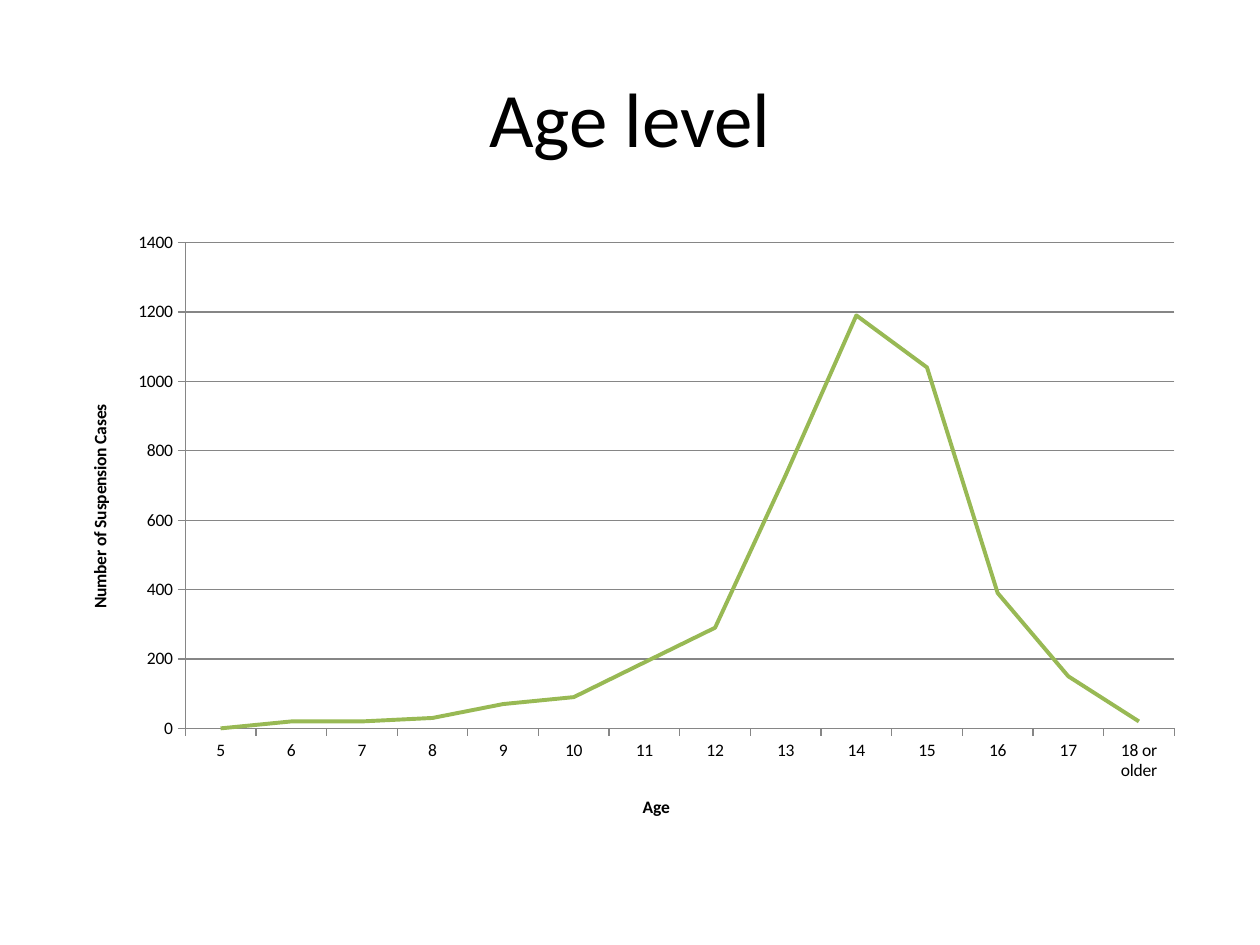
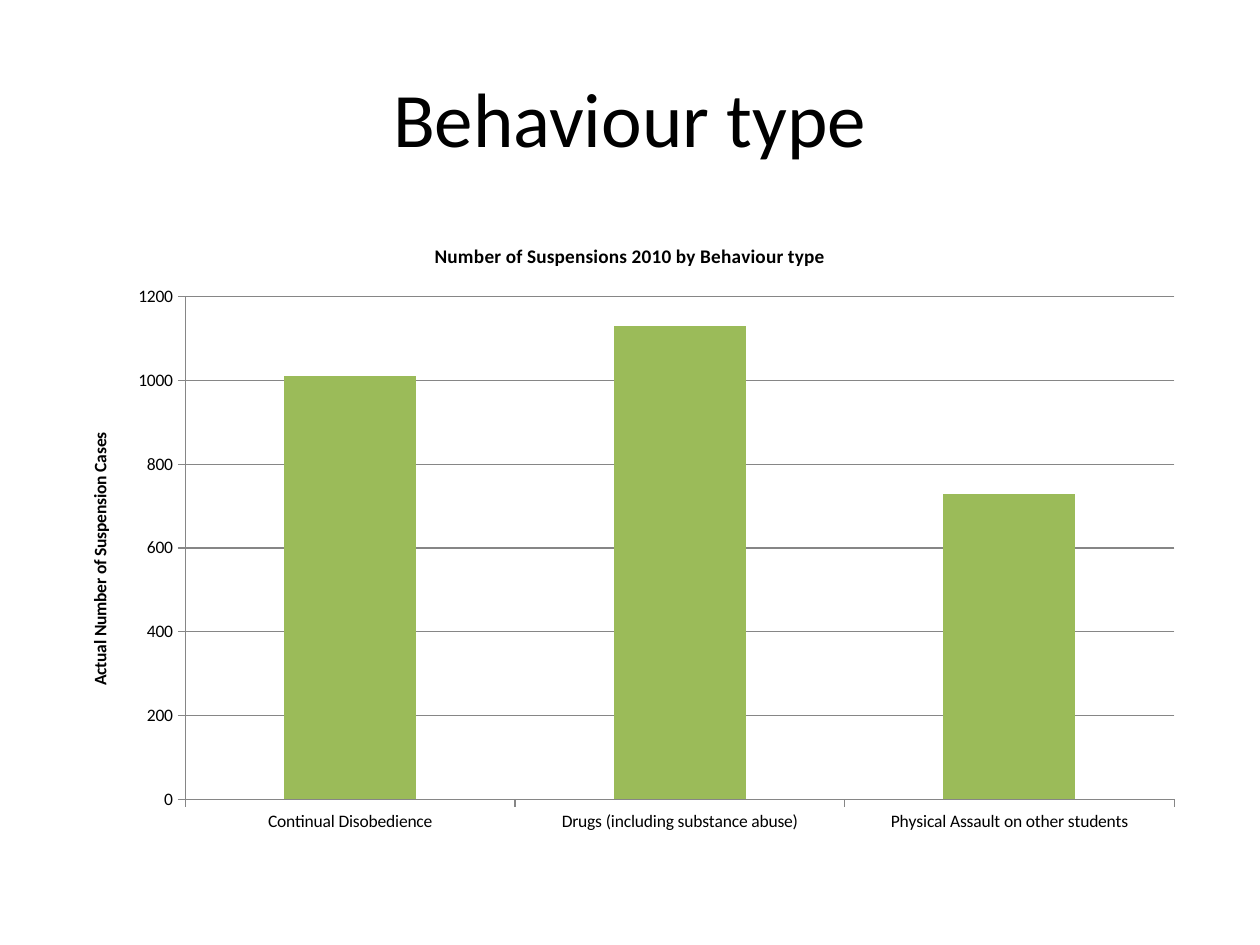
import pptx
import pptx.util
import pptx.chart.data
import pptx.dml.color
import pptx.enum.chart
import pptx.enum.text

Cm, Pt = pptx.util.Cm, pptx.util.Pt
ChartType = pptx.enum.chart.XL_CHART_TYPE

FONT = "Calibri"
COLOURS = {"text": "000000", "grid": "868686", "line": "98B954", "column": "9BBB59"}
LEFT, WIDTH = Cm(1.27), Cm(22.86)
TITLE_ONLY = 5


def colour(name):
    return pptx.dml.color.RGBColor.from_string(COLOURS[name])


def style_font(font, size, bold=False):
    font.name = FONT
    font.size = Pt(size)
    font.bold = bold
    font.color.rgb = colour("text")


def add_span(para, text, size, bold=False):
    span = para.add_run()
    span.text = text
    style_font(span.font, size, bold)


def add_page(deck, heading):
    page = deck.slides.add_slide(deck.slide_layouts[TITLE_ONLY])
    title = page.shapes.title
    title.left, title.top, title.width, title.height = LEFT, Cm(0.76), WIDTH, Cm(3.18)
    title.text_frame.vertical_anchor = pptx.enum.text.MSO_ANCHOR.MIDDLE
    para = title.text_frame.paragraphs[0]
    para.alignment = pptx.enum.text.PP_ALIGN.CENTER
    add_span(para, heading, 44)
    return page


def style_line(line, name, width):
    line.color.rgb = colour(name)
    line.width = Pt(width)


def style_axis(axis, title=None):
    axis.major_tick_mark = pptx.enum.chart.XL_TICK_MARK.OUTSIDE
    axis.minor_tick_mark = pptx.enum.chart.XL_TICK_MARK.NONE
    style_font(axis.tick_labels.font, 10)
    style_line(axis.format.line, "grid", 0.75)
    axis.has_title = title is not None
    if title:
        add_span(axis.axis_title.text_frame.paragraphs[0], title, 10, bold=True)


def add_suspension_chart(page, kind, cases, value_title, top, category_title=None):
    """Place a one-series chart of cases, given as category: value."""
    chart_data = pptx.chart.data.CategoryChartData()
    chart_data.categories = list(cases)
    chart_data.add_series("Series 1", list(cases.values()))
    chart = page.shapes.add_chart(
        kind, LEFT, Cm(4.44), WIDTH, Cm(12.57), chart_data).chart
    chart.has_legend = False
    chart.has_title = False
    style_font(chart.font, 10)
    chart.plots[0].vary_by_categories = False

    # Axes and gridlines
    style_axis(chart.category_axis, category_title)
    scale = chart.value_axis
    style_axis(scale, value_title)
    scale.minimum_scale, scale.maximum_scale, scale.major_unit = 0, top, 200
    scale.has_major_gridlines = True
    style_line(scale.major_gridlines.format.line, "grid", 0.75)
    return chart


def add_age_page(deck):
    page = add_page(deck, "Age level")
    ages = [str(age) for age in range(5, 18)] + ["18 or older"]
    counts = [0, 20, 20, 30, 70, 90, 190, 290, 730, 1190, 1040, 390, 150, 20]
    chart = add_suspension_chart(
        page, ChartType.LINE, dict(zip(ages, counts)),
        "Number of Suspension Cases", 1400, "Age")
    series = chart.plots[0].series[0]
    series.smooth = False
    series.marker.style = pptx.enum.chart.XL_MARKER_STYLE.NONE
    style_line(series.format.line, "line", 2.25)


def add_behaviour_page(deck):
    page = add_page(deck, "Behaviour type")
    cases = {
        "Continual Disobedience": 1010,
        "Drugs (including substance abuse)": 1130,
        "Physical Assault on other students": 730,
    }
    chart = add_suspension_chart(
        page, ChartType.COLUMN_CLUSTERED, cases,
        "Actual Number of Suspension Cases", 1200)
    chart.has_title = True
    chart.chart_title.include_in_layout = False
    add_span(chart.chart_title.text_frame.paragraphs[0],
             "Number of Suspensions 2010 by Behaviour type", 11, bold=True)
    plot = chart.plots[0]
    plot.gap_width = 150
    fill = plot.series[0].format.fill
    fill.solid()
    fill.fore_color.rgb = colour("column")


def main():
    deck = pptx.Presentation()
    deck.slide_width, deck.slide_height = Cm(25.4), Cm(19.05)
    add_age_page(deck)
    add_behaviour_page(deck)
    deck.save("out.pptx")


if __name__ == "__main__":
    main()
